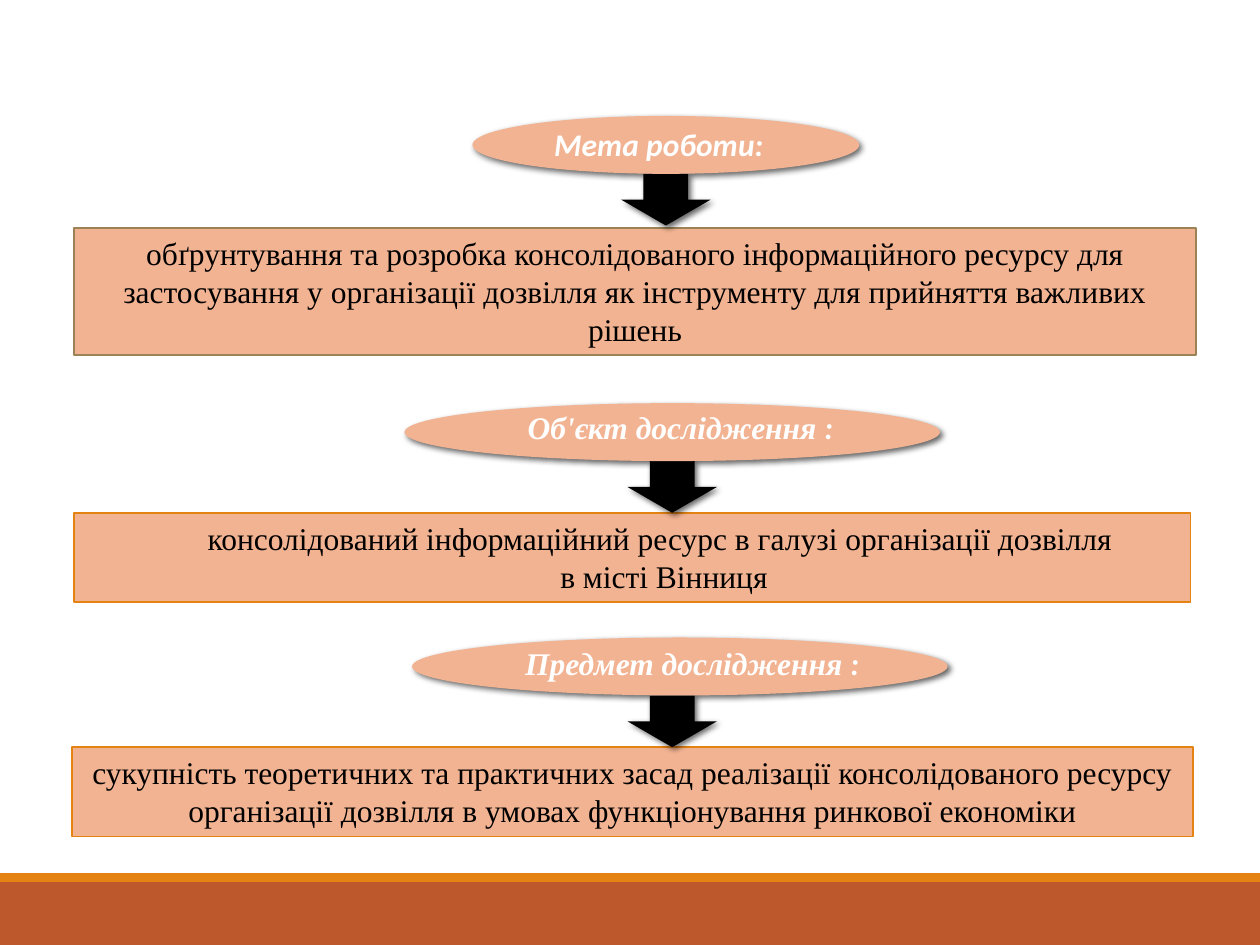
from lxml import etree
from pptx import Presentation
from pptx.dml.color import RGBColor
from pptx.enum import shapes, text
from pptx.oxml.ns import qn
from pptx.util import Inches, Pt

SERIF, SANS = "Times New Roman", "Calibri"
PEACH, ORANGE, BROWN = "F2B392", "E48312", "9B8357"


def rgb(value):
    """Return the colour for a hex string."""
    return RGBColor.from_string(value)


def add_shadow(props, index):
    """Insert a soft lower-right shadow into shape or run properties."""
    effects = etree.Element(qn("a:effectLst"))
    shadow = etree.SubElement(effects, qn("a:outerShdw"), blurRad=str(Pt(3.5)),
                              dist=str(Pt(2)), dir="2700000", algn="tl", rotWithShape="0")
    color = etree.SubElement(shadow, qn("a:srgbClr"), val="000000")
    etree.SubElement(color, qn("a:alpha"), val="60000")
    props.insert(index, effects)


def add_shape(parent, kind, box, fill, line=None, shadow=False):
    """Add a filled preset shape."""
    sp = parent.add_shape(kind, *map(Inches, box))
    sp.fill.solid()
    sp.fill.fore_color.rgb = rgb(fill)
    if line:
        sp.line.color.rgb = rgb(line)
        sp.line.width = Pt(1)
    else:
        sp.line.fill.background()
    if shadow:
        add_shadow(sp._element.spPr, len(sp._element.spPr))
    else:
        sp.shadow.inherit = False
    return sp


def add_run(p, value, color, **formats):
    """Add a run with the given font attributes."""
    r = p.add_run()
    r.text = value
    r.font.color.rgb = rgb(color)
    for name, setting in {"size": Pt(18), "name": SERIF, **formats}.items():
        setattr(r.font, name, setting)
    return r


def add_panel(slide, box, line, lines, indent=0):
    """Add a bordered panel with centred paragraphs."""
    sp = add_shape(slide.shapes, shapes.MSO_SHAPE.RECTANGLE, box, PEACH, line)
    tf = sp.text_frame
    tf.word_wrap = True
    tf.vertical_anchor = text.MSO_ANCHOR.TOP
    for i, value in enumerate(lines):
        p = tf.add_paragraph() if i else tf.paragraphs[0]
        p.alignment = text.PP_ALIGN.CENTER
        if indent:
            p._p.get_or_add_pPr().set("indent", str(Inches(indent)))
        add_run(p, value, "000000")


def add_heading(slide, oval, arrow_left, label, runs):
    """Add a grouped oval heading with a down arrow beneath it."""
    group = slide.shapes.add_group_shape().shapes
    left, top, width, height = oval
    kinds = shapes.MSO_SHAPE
    add_shape(group, kinds.DOWN_ARROW, (arrow_left, top + height, 0.71, 0.41), "000000", shadow=True)
    add_shape(group, kinds.OVAL, oval, PEACH, shadow=True)
    tf = group.add_textbox(*map(Inches, label)).text_frame
    tf.word_wrap = True
    for value, font in runs:
        r = add_run(tf.paragraphs[0], value, "FFFFFF", name=font, bold=True, italic=True)
        add_shadow(r._r.rPr, 1)


def main():
    """Build the slide and save it."""
    prs = Presentation()
    prs.slide_width, prs.slide_height = Inches(10), Inches(7.5)
    slide = prs.slides.add_slide(prs.slide_layouts[6])
    rect = shapes.MSO_SHAPE.RECTANGLE
    add_shape(slide.shapes, rect, (0, 7, 10, 0.5), "BD582C")
    add_shape(slide.shapes, rect, (0, 6.93, 10, 0.07), ORANGE)

    add_panel(slide, (0.59, 1.81, 8.9, 1.01), BROWN, [
        "обґрунтування та розробка консолідованого інформаційного ресурсу для "
        "застосування у організації дозвілля як інструменту для прийняття важливих рішень"])
    add_panel(slide, (0.59, 4.07, 8.86, 0.71), ORANGE, [
        "консолідований інформаційний ресурс в галузі організації дозвілля ",
        "в місті Вінниця"], indent=0.5)
    add_panel(slide, (0.57, 5.93, 8.9, 0.71), ORANGE, [
        "сукупність теоретичних та практичних засад реалізації консолідованого ресурсу "
        "організації дозвілля в умовах функціонування ринкової економіки"])

    add_heading(slide, (3.75, 0.92, 3.07, 0.46), 4.93, (4.3, 0.94, 2.07, 0.4),
                [("Мета роботи:", SANS)])
    add_heading(slide, (3.21, 3.2, 4.25, 0.46), 4.98, (4.09, 3.19, 2.86, 0.4),
                [("Об'єкт дослідження ", SERIF), (":", SANS)])
    add_heading(slide, (3.27, 5.06, 4.25, 0.46), 4.98, (4.07, 5.06, 2.86, 0.4),
                [("Предмет дослідження ", SERIF), (":", SANS)])
    prs.save("out.pptx")


if __name__ == "__main__":
    main()
